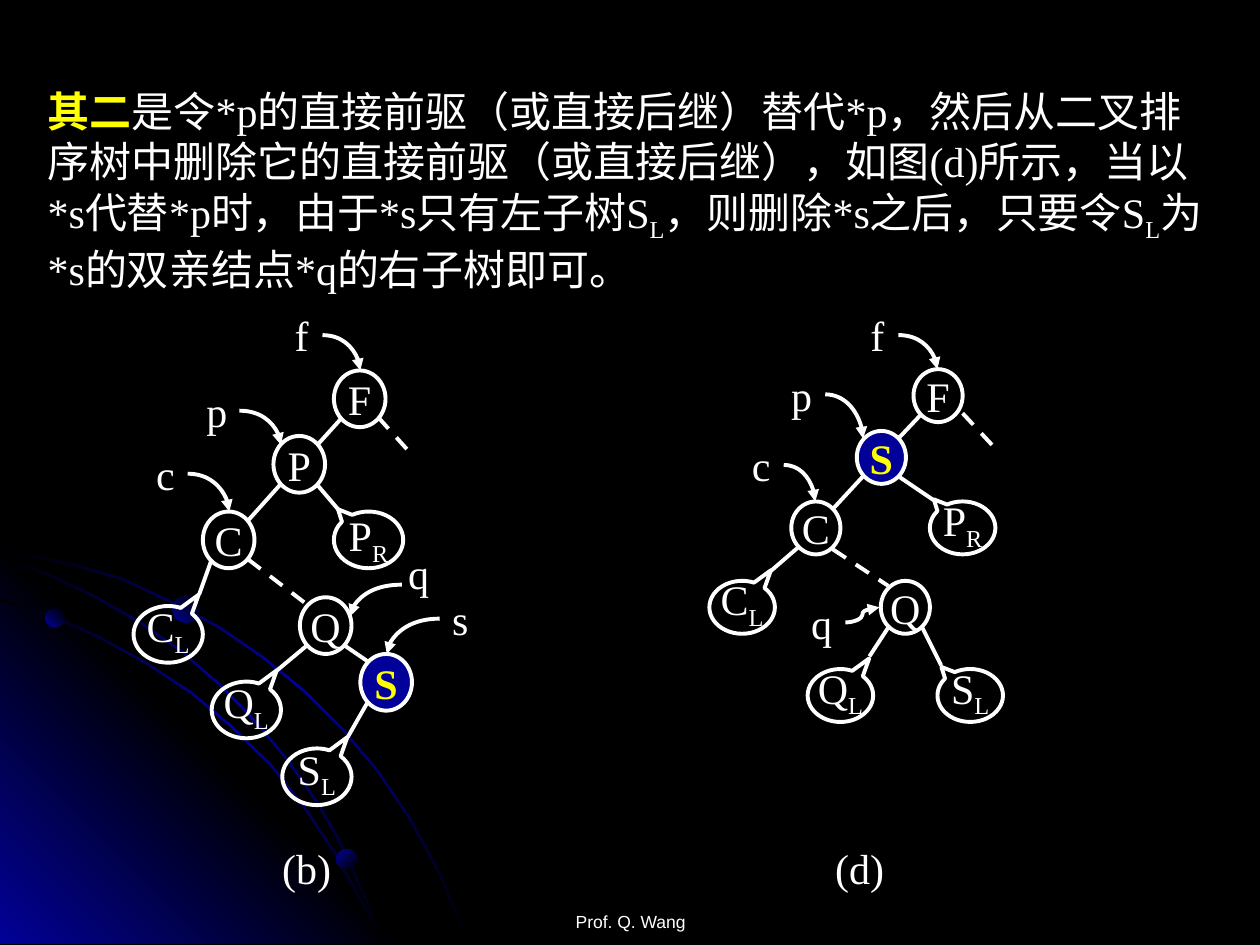
from dataclasses import dataclass, field

import pptx
import pptx.dml.color
import pptx.enum.dml
import pptx.enum.shapes
import pptx.enum.text
import pptx.oxml
import pptx.oxml.ns
import pptx.util

SHAPE = pptx.enum.shapes.MSO_SHAPE
WIRE = pptx.enum.shapes.MSO_CONNECTOR
ANCHOR = pptx.enum.text.MSO_ANCHOR
ALIGN = pptx.enum.text.PP_ALIGN
FIT = pptx.enum.text.MSO_AUTO_SIZE
WHITE, YELLOW, BLUE, BLACK = "FFFFFF", "FFFF00", "010199", "000000"
SERIF = {"name": "Times New Roman", "size": pptx.util.Pt(24), "bold": False}


@dataclass
class Node:
    label: str
    x: float
    y: float


@dataclass
class Leaf(Node):
    flip: str = "hv"
    space: float = 0.5
    tip: float = 0.7


@dataclass
class Link:
    x1: float
    y1: float
    x2: float
    y2: float
    dash: bool = False


@dataclass
class Curve(Link):
    kind: str = "curvedConnector2"


@dataclass
class Tree:
    high: float
    round_w: float
    leaf_w: float
    nodes: list[Node]
    leaves: list[Leaf]
    links: list[Link]
    curves: list[Curve]
    tags: list[Node] = field(default_factory=list)


def inch(value: float) -> pptx.util.Length:
    return pptx.util.Cm(value * 2.54)


def box(*values: float) -> list[pptx.util.Length]:
    return [inch(value) for value in values]


def color(code: str) -> pptx.dml.color.RGBColor:
    return pptx.dml.color.RGBColor.from_string(code)


def apply(target, values: dict) -> None:
    for name, value in values.items():
        setattr(target, name, value)


def write(par, text: str, code: str = WHITE, low: bool = False, **more) -> None:
    run = par.add_run()
    run.text = text
    apply(run.font, SERIF | more)
    run.font.color.rgb = color(code)
    if low:
        run.font._element.set("baseline", "-25000")


def shade(shape, angle: int, codes: list[str]) -> None:
    step = 100000 // (len(codes) - 1)
    stops = "".join(
        f'<a:gs pos="{i * step}"><a:srgbClr val="{code}"/></a:gs>'
        for i, code in enumerate(codes)
    )
    shape.fill.gradient()
    props = shape._element.spPr
    props.replace(
        props.find(pptx.oxml.ns.qn("a:gradFill")),
        pptx.oxml.parse_xml(
            f'<a:gradFill {pptx.oxml.ns.nsdecls("a")}><a:gsLst>{stops}</a:gsLst>'
            f'<a:lin ang="{angle * 60000}" scaled="1"/></a:gradFill>'
        ),
    )
    shape.line.fill.background()
    shape.shadow.inherit = False


def trace(shapes, points: list[tuple[float, float]]):
    dots = [tuple(box(*point)) for point in points]
    form = shapes.build_freeform(*dots[0], scale=1.0)
    form.add_line_segments(dots[1:], close=True)
    return form.convert_to_shape()


def arc(shapes, edge: list[tuple[float, float]]) -> None:
    last = len(edge) - 1
    inner = [
        (x - 0.02 * i / last, y + 0.02 * (1 - i / last))
        for i, (x, y) in enumerate(edge)
    ]
    shade(trace(shapes, edge + inner[::-1]), 45, [BLACK, BLUE, BLACK])


def label(shapes, x: float, y: float, wide: float, high: float, wrap: bool = False):
    frame = shapes.add_textbox(*box(x, y, wide, high)).text_frame
    apply(frame, {"word_wrap": wrap, "auto_size": FIT.SHAPE_TO_FIT_TEXT})
    return frame.paragraphs[0]


def outline(shapes, kind, node: Node, wide: float, high: float):
    shape = shapes.add_shape(kind, *box(node.x, node.y, wide, high))
    shape.shadow.inherit = False
    shape.fill.background()
    shape.line.color.rgb = color(WHITE)
    shape.line.width = pptx.util.Pt(2.25)
    frame = shape.text_frame
    apply(frame, {"word_wrap": False, "vertical_anchor": ANCHOR.MIDDLE})
    frame.paragraphs[0].alignment = ALIGN.CENTER
    return shape


def ring(shapes, node: Node, wide: float, high: float) -> None:
    shape = outline(shapes, SHAPE.OVAL, node, wide, high)
    par = shape.text_frame.paragraphs[0]
    if node.label == "S":
        shape.fill.solid()
        shape.fill.fore_color.rgb = color(BLUE)
        write(par, node.label, YELLOW, bold=True)
    else:
        write(par, node.label)


def drop(shapes, leaf: Leaf, wide: float, high: float) -> None:
    shape = outline(shapes, SHAPE.OVAL_CALLOUT, leaf, wide, high)
    shape.adjustments[0], shape.adjustments[1] = -0.44, leaf.tip
    for axis in leaf.flip:
        shape._element.spPr.xfrm.set("flip" + axis.upper(), "1")
    shape.text_frame._txBody.bodyPr.set("rot", "10800000")
    par = shape.text_frame.paragraphs[0]
    par.line_spacing = leaf.space
    write(par, leaf.label[0])
    write(par, leaf.label[1], low=True)


def join(shapes, link: Link) -> None:
    bent = isinstance(link, Curve)
    wire = shapes.add_connector(
        WIRE.CURVE if bent else WIRE.STRAIGHT,
        *box(link.x1, link.y1, link.x2, link.y2),
    )
    wire.line.color.rgb = color(WHITE)
    wire.line.width = pptx.util.Pt(2.25)
    if link.dash:
        wire.line.dash_style = pptx.enum.dml.MSO_LINE.DASH
    props = wire._element.spPr
    space = pptx.oxml.ns.nsdecls("a")
    if bent:
        props.find(pptx.oxml.ns.qn("a:prstGeom")).set("prst", link.kind)
        wire.line._ln.append(pptx.oxml.parse_xml(f'<a:tailEnd {space} type="triangle"/>'))
    props.append(pptx.oxml.parse_xml(f"<a:effectLst {space}/>"))


def draw(shapes, tree: Tree) -> None:
    for node in tree.nodes:
        ring(shapes, node, tree.round_w, tree.high)
    for leaf in tree.leaves:
        drop(shapes, leaf, tree.leaf_w, tree.high)
    for link in tree.links + tree.curves:
        join(shapes, link)
    for tag in tree.tags:
        write(label(shapes, tag.x, tag.y, 0.59 if len(tag.label) > 1 else 0.36, 0.5), tag.label)


ARCS = [
    [(0, 4.35), (0.57, 4.47), (0.98, 4.59), (1.36, 4.77), (1.74, 4.97), (2.09, 5.21), (2.42, 5.48),
     (2.72, 5.78), (3, 6.11), (3.25, 6.48), (3.39, 6.73), (3.52, 6.98), (3.62, 7.23), (3.72, 7.49)],
    [(0, 4.75), (0.41, 4.88), (0.79, 5.05), (1.17, 5.26), (1.52, 5.49), (1.84, 5.76),
     (2.15, 6.06), (2.42, 6.4), (2.66, 6.76), (2.86, 7.12), (2.96, 7.3), (3.03, 7.49)],
    [(0, 4.42), (0.39, 4.55), (0.76, 4.73), (1.11, 4.93), (1.44, 5.16), (1.75, 5.43), (2.04, 5.73),
     (2.29, 6.03), (2.54, 6.39), (2.69, 6.65), (2.82, 6.93), (2.94, 7.2), (3.03, 7.49)],
]
DOTS = [(0.36, 4.83, 0.15, 315), (2.67, 6.74, 0.16, 45), (1.37, 4.73, 0.21, 315)]
BODY = [
    ("是令*p的直接前驱（或直接后继）替代*p，然后从二叉排序树中删除它的直接前驱（或直接后继），"
     "如图(d)所示，当以*s代替*p时，由于*s只有左子树S", False),
    ("L", True), ("，则删除*s之后，只要令S", False),
    ("L", True), ("为*s的双亲结点*q的右子树即可。", False),
]
TREES = [
    Tree(0.45, 0.41, 0.55,
         [Node("F", 2.65, 2.94), Node("P", 2.17, 3.46), Node("C", 1.61, 4.06),
          Node("Q", 2.38, 4.74), Node("S", 2.86, 5.19)],
         [Leaf("CL", 1.06, 4.81), Leaf("PR", 2.65, 4.06, "v", 0.7, 0.54),
          Leaf("QL", 1.68, 5.41), Leaf("SL", 2.24, 5.94)],
         [Link(2.71, 3.32, 2.52, 3.53), Link(2.23, 3.84, 1.97, 4.13), Link(1.68, 4.44, 1.58, 4.72),
          Link(2.52, 3.85, 2.69, 4.05), Link(2.44, 5.12, 2.2, 5.32), Link(2.92, 5.57, 2.76, 5.85),
          Link(2.73, 5.12, 2.92, 5.25), Link(1.97, 4.44, 2.44, 4.8, True),
          Link(3, 3.31, 3.27, 3.61, True)],
         [Curve(2.56, 2.66, 2.86, 2.94), Curve(1.9, 3.26, 2.23, 3.53), Curve(3.19, 4.64, 2.78, 4.89),
          Curve(3.49, 4.91, 3.07, 5.19), Curve(1.49, 3.76, 1.82, 4.06)],
         [Node("f", 2.24, 2.41), Node("p", 1.54, 3.01), Node("c", 1.14, 3.51),
          Node("s", 3.49, 4.66), Node("q", 3.14, 4.3), Node("(b)", 2.14, 6.64)]),
    Tree(0.42, 0.39, 0.52,
         [Node("F", 7.25, 2.93), Node("S", 6.8, 3.42), Node("C", 6.28, 3.98), Node("Q", 6.99, 4.61)],
         [Leaf("QL", 6.41, 5.31), Leaf("SL", 7.44, 5.31, "v", tip=0.54),
          Leaf("CL", 5.63, 4.61), Leaf("PR", 7.38, 3.98, "v", tip=0.54)],
         [Link(7.31, 3.29, 7.13, 3.48), Link(6.85, 3.78, 6.61, 4.04), Link(7.64, 3.28, 7.9, 3.56, True),
          Link(7.05, 4.98, 6.9, 5.21), Link(7.32, 4.98, 7.47, 5.28), Link(6.34, 4.34, 6.12, 4.53),
          Link(7.13, 3.78, 7.41, 3.97), Link(6.61, 4.36, 7.05, 4.65, True)],
         [Curve(7.13, 2.66, 7.44, 2.93), Curve(6.55, 3.13, 6.85, 3.48), Curve(6.22, 3.69, 6.47, 3.98),
          Curve(6.71, 4.94, 6.98, 4.82, kind="curvedConnector3")],
         [Node("f", 6.81, 2.41), Node("p", 6.18, 2.88), Node("c", 5.87, 3.44),
          Node("q", 6.34, 4.69), Node("(d)", 6.53, 6.64)]),
]


def main() -> None:
    deck = pptx.Presentation()
    apply(deck, {"slide_width": inch(10), "slide_height": inch(7.5)})
    slide = deck.slides.add_slide(deck.slide_layouts[6])
    slide.background.fill.solid()
    slide.background.fill.fore_color.rgb = color(BLACK)
    shapes = slide.shapes
    arc(shapes, ARCS[0])
    shade(trace(shapes, [(3.22, 7.49), (0, 7.49), (0, 4.27)]), 315, [BLUE, BLACK, BLUE])
    for edge in ARCS[1:]:
        arc(shapes, edge)
    for x, y, size, angle in DOTS:
        shade(shapes.add_shape(SHAPE.OVAL, *box(x, y, size, size)), angle, [BLUE, BLACK])
    par = label(shapes, 0.28, 0.63, 9.45, 1.72, True)
    write(par, "其二", YELLOW, bold=True)
    for text, low in BODY:
        write(par, text, low=low)
    for tree in TREES:
        draw(shapes, tree)
    foot = shapes.add_textbox(*box(3.42, 6.9, 3.17, 0.5)).text_frame
    apply(foot, {"word_wrap": True, "vertical_anchor": ANCHOR.BOTTOM, "margin_bottom": 0})
    foot.paragraphs[0].alignment = ALIGN.CENTER
    write(foot.paragraphs[0], "Prof. Q. Wang", name="Arial", size=pptx.util.Pt(10))
    deck.save("out.pptx")


if __name__ == "__main__":
    main()
